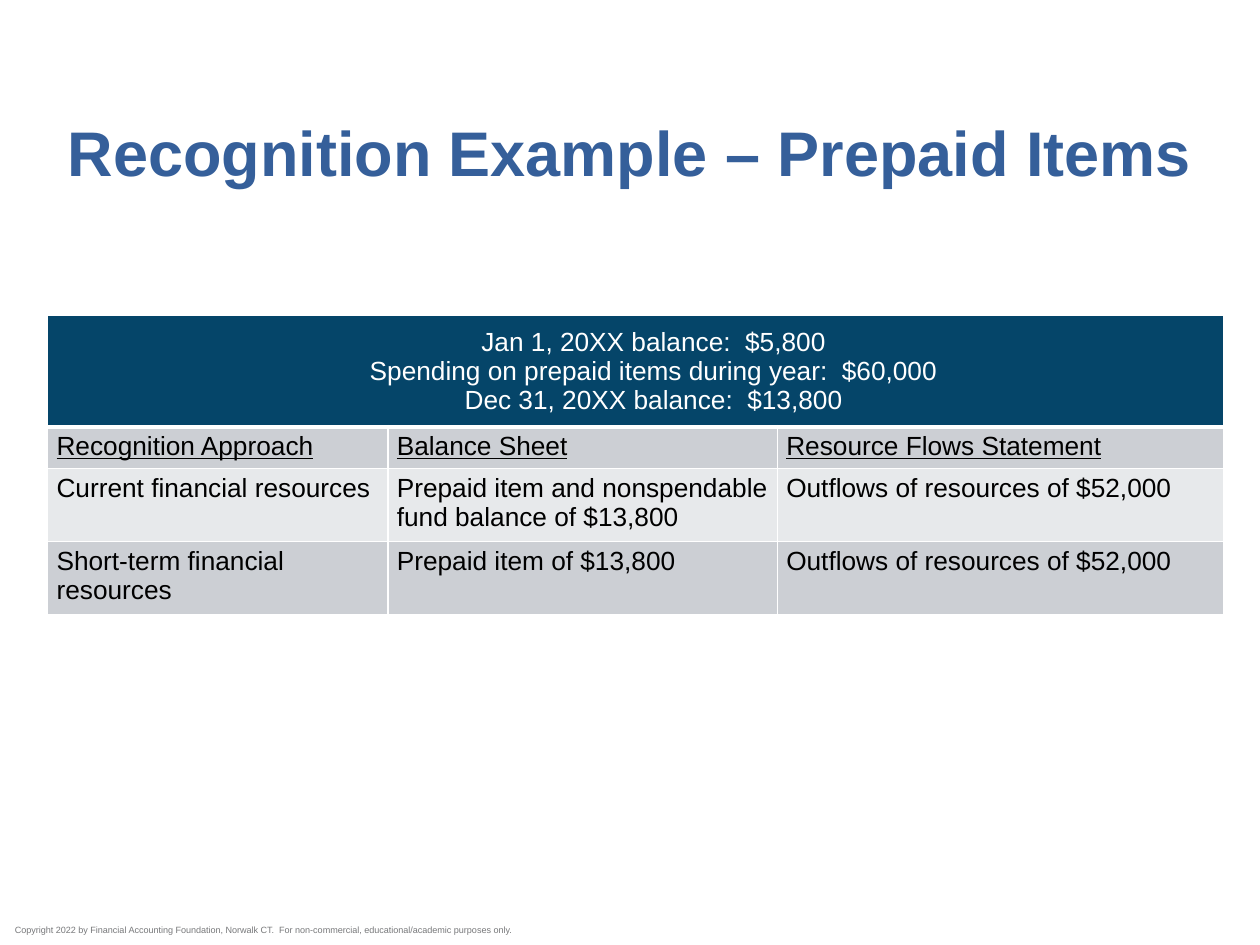
from lxml import etree
from pptx import Presentation
from pptx.dml.color import RGBColor
from pptx.enum.text import MSO_ANCHOR, PP_ALIGN
from pptx.oxml.ns import qn
from pptx.util import Cm, Pt

TOP, MIDDLE, BOTTOM = MSO_ANCHOR.TOP, MSO_ANCHOR.MIDDLE, MSO_ANCHOR.BOTTOM
LEFT, CENTER = PP_ALIGN.LEFT, PP_ALIGN.CENTER
WHITE, BLACK, GREY = "FFFFFF", "000000", "78797B"
TITLE_BLUE, BANNER_BLUE = "355F9A", "054569"
DARK_BAND, LIGHT_BAND = "CCCFD4", "E7E9EB"


def rgb(value):
    return RGBColor.from_string(value)


class SlideBuilder:
    font = "Arial"
    table_size = 15

    def __init__(self, slide):
        self.slide = slide

    def add_run(self, paragraph, text, size, color, bold=False, underline=False):
        run = paragraph.add_run()
        run.text = text
        run.font.name = self.font
        run.font.size = Pt(size)
        run.font.bold = bold
        run.font.underline = underline
        run.font.color.rgb = rgb(color)

    def text(self, box, content, size, color, anchor=TOP, bold=False, spacing=None):
        frame = self.slide.shapes.add_textbox(*map(Cm, box)).text_frame
        frame.word_wrap = True
        frame.vertical_anchor = anchor
        frame.margin_left = frame.margin_right = 0
        frame.margin_top = frame.margin_bottom = 0
        paragraph = frame.paragraphs[0]
        if spacing:
            paragraph.line_spacing = Pt(spacing)
        self.add_run(paragraph, content, size, color, bold)

    def table(self, left, top, widths, heights):
        frame = self.slide.shapes.add_table(
            len(heights), len(widths), Cm(left), Cm(top),
            Cm(sum(widths)), Cm(sum(heights)))
        table = frame.table
        for column, width in zip(table.columns, widths):
            column.width = Cm(width)
        for row, height in zip(table.rows, heights):
            row.height = Cm(height)
        return table

    def cell(self, cell, lines, fill, color=BLACK, align=LEFT, anchor=TOP,
             underline=False, indent=0.18, bottom=1):
        cell.margin_left, cell.margin_right = Cm(indent), Cm(0.18)
        cell.margin_top = cell.margin_bottom = Cm(0.1)
        cell.vertical_anchor = anchor
        frame = cell.text_frame
        for index, line in enumerate(lines):
            paragraph = frame.add_paragraph() if index else frame.paragraphs[0]
            paragraph.alignment = align
            self.add_run(paragraph, line, self.table_size, color, underline=underline)
        self.borders(cell, bottom)
        cell.fill.solid()
        cell.fill.fore_color.rgb = rgb(fill)

    def borders(self, cell, bottom):
        properties = cell._tc.get_or_add_tcPr()
        for side, width in (("L", 1), ("R", 1), ("T", 1), ("B", bottom)):
            line = etree.SubElement(properties, qn(f"a:ln{side}"), w=str(Pt(width)))
            solid = etree.SubElement(line, qn("a:solidFill"))
            etree.SubElement(solid, qn("a:srgbClr"), val=WHITE)


def main():
    deck = Presentation()
    deck.slide_width, deck.slide_height = Cm(25.4), Cm(19.05)
    builder = SlideBuilder(deck.slides.add_slide(deck.slide_layouts[6]))

    builder.text(
        (0.3, 18.64, 13.8, 0.36),
        "Copyright 2022 by Financial Accounting Foundation, Norwalk CT.  "
        "For non-commercial, educational/academic purposes only.", 5.2, GREY)
    builder.text((1.37, 1.63, 22.78, 2.18), "Recognition Example – Prepaid Items",
                 36, TITLE_BLUE, BOTTOM, bold=True, spacing=37)

    balances = [
        "Jan 1, 20XX balance:  $5,800",
        "Spending on prepaid items during year:  $60,000",
        "Dec 31, 20XX balance:  $13,800",
    ]
    approaches = [
        ("Recognition Approach", "Balance Sheet", "Resource Flows Statement"),
        ("Current financial resources",
         "Prepaid item and nonspendable fund balance of $13,800",
         "Outflows of resources of $52,000"),
        ("Short-term financial resources", "Prepaid item of $13,800",
         "Outflows of resources of $52,000"),
    ]
    recognition = builder.table(0.96, 6.36, (6.86, 7.85, 8.99), (2.25, 0.81, 1.43, 1.43))
    recognition.cell(0, 0).merge(recognition.cell(0, 2))
    builder.cell(recognition.cell(0, 0), balances, BANNER_BLUE, WHITE, CENTER, MIDDLE,
                 indent=0.91, bottom=3)
    for row, entries in enumerate(approaches, start=1):
        band = DARK_BAND if row % 2 else LIGHT_BAND
        for column, entry in enumerate(entries):
            builder.cell(recognition.cell(row, column), [entry], band, underline=row == 1)

    deck.save("out.pptx")


if __name__ == "__main__":
    main()
